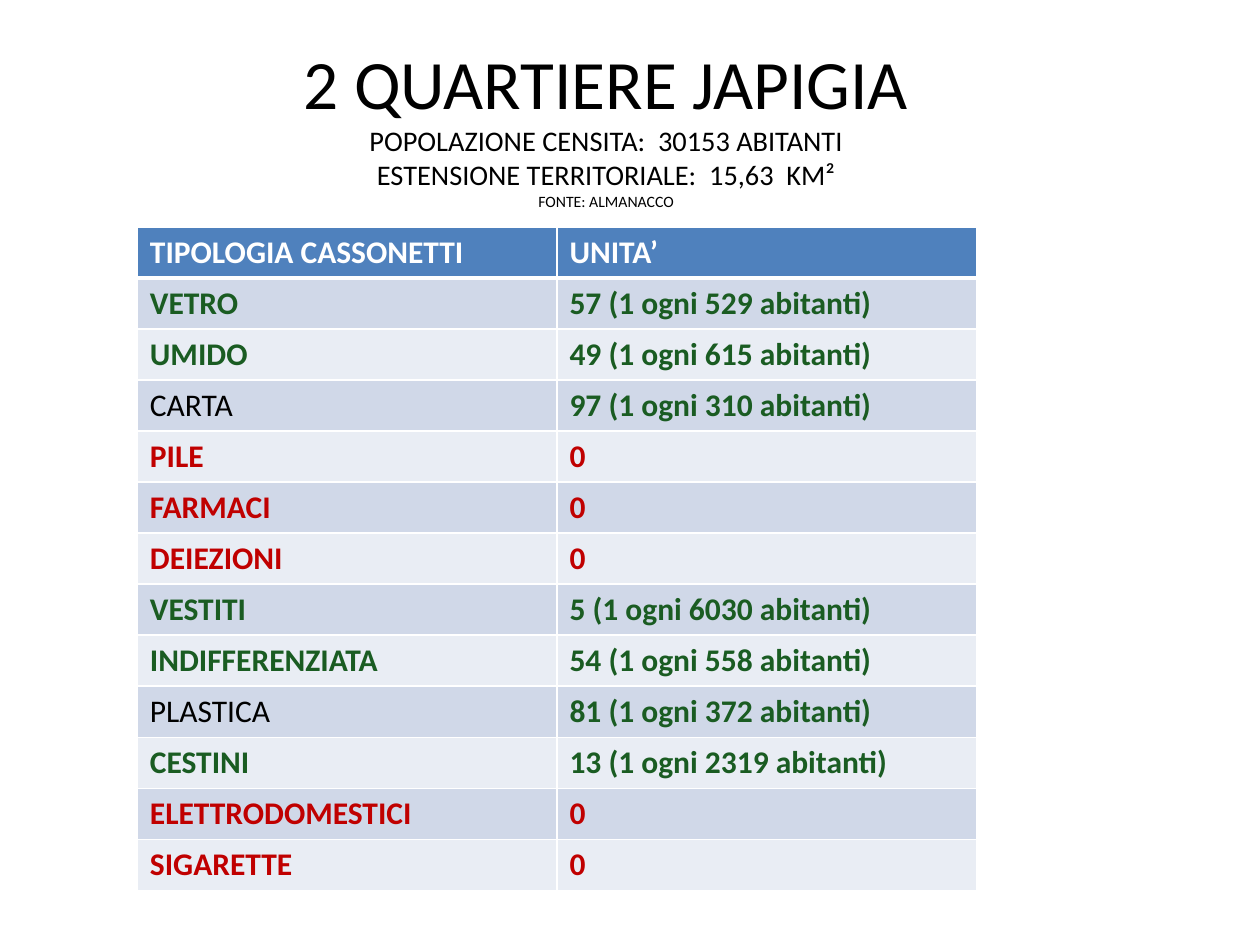
import pptx
import pptx.dml.color
import pptx.enum.text
import pptx.oxml
import pptx.oxml.ns
import pptx.util

Inches = pptx.util.Inches
Pt = pptx.util.Pt

FONT = "Calibri"
COLORS = {
    "white": "FFFFFF",
    "black": "000000",
    "header": "4F81BD",
    "band_dark": "D0D8E8",
    "band_light": "E9EDF4",
    "present": "1A5C22",
    "absent": "C00000",
}
TITLE_LINES = [
    ("2 QUARTIERE JAPIGIA", 39.6),
    ("POPOLAZIONE CENSITA:  30153 ABITANTI", 16.2),
    ("ESTENSIONE TERRITORIALE:  15,63  KM²", 16.2),
    ("FONTE: ALMANACCO", 9),
]
HEADERS = ("TIPOLOGIA CASSONETTI", "UNITA’")
BINS = [
    ("VETRO", "57 (1 ogni 529 abitanti)"),
    ("UMIDO", "49 (1 ogni 615 abitanti)"),
    ("CARTA", "97 (1 ogni 310 abitanti)"),
    ("PILE", "0"),
    ("FARMACI", "0"),
    ("DEIEZIONI", "0"),
    ("VESTITI", "5 (1 ogni 6030 abitanti)"),
    ("INDIFFERENZIATA", "54 (1 ogni 558 abitanti)"),
    ("PLASTICA", "81 (1 ogni 372 abitanti)"),
    ("CESTINI", "13 (1 ogni 2319 abitanti)"),
    ("ELETTRODOMESTICI", "0"),
    ("SIGARETTE", "0"),
]
PLAIN_BINS = ("CARTA", "PLASTICA")


def rgb(name):
    return pptx.dml.color.RGBColor.from_string(COLORS[name])


def format_runs(p, size, color, bold=False):
    for r in p.runs:
        r.font.name = FONT
        r.font.size = Pt(size)
        r.font.bold = bold
        r.font.color.rgb = rgb(color)


def add_title(slide):
    sp = slide.shapes.add_textbox(Inches(0.31), Inches(0.37), Inches(9), Inches(1.25))
    tf = sp.text_frame
    tf.word_wrap = True
    tf.vertical_anchor = pptx.enum.text.MSO_ANCHOR.MIDDLE
    tf.text = "\n".join(text for text, size in TITLE_LINES)
    for p, (text, size) in zip(tf.paragraphs, TITLE_LINES):
        p.alignment = pptx.enum.text.PP_ALIGN.CENTER
        format_runs(p, size, "black")


def set_borders(cell, top=1, bottom=1):
    tc_pr = cell._tc.get_or_add_tcPr()
    for side, width in (("L", 1), ("R", 1), ("T", top), ("B", bottom)):
        tc_pr.append(pptx.oxml.parse_xml(
            f'<a:ln{side} {pptx.oxml.ns.nsdecls("a")} w="{Pt(width)}">'
            f'<a:solidFill><a:srgbClr val="{COLORS["white"]}"/></a:solidFill>'
            f'</a:ln{side}>'
        ))


def fill_cell(cell, text, fill, color, bold):
    cell.fill.solid()
    cell.fill.fore_color.rgb = rgb(fill)
    cell.text_frame.text = text
    format_runs(cell.text_frame.paragraphs[0], 18, color, bold)


def add_bin_table(slide):
    rows = [HEADERS] + BINS
    table = slide.shapes.add_table(
        len(rows), len(HEADERS), Inches(1.09), Inches(1.8), Inches(6.66), Inches(5.27)
    ).table
    for i, row in enumerate(rows):
        for j, text in enumerate(row):
            cell = table.cell(i, j)
            set_borders(cell, top=3 if i == 1 else 1, bottom=3 if i == 0 else 1)
            if i == 0:
                fill_cell(cell, text, "header", "white", True)
                continue
            band = "band_dark" if i % 2 else "band_light"
            plain = text in PLAIN_BINS
            status = "absent" if row[1] == "0" else "present"
            fill_cell(cell, text, band, "black" if plain else status, not plain)


def main():
    prs = pptx.Presentation()
    prs.slide_width = Inches(10)
    prs.slide_height = Inches(7.5)
    slide = prs.slides.add_slide(prs.slide_layouts[6])
    add_title(slide)
    add_bin_table(slide)
    prs.save("out.pptx")


if __name__ == "__main__":
    main()
